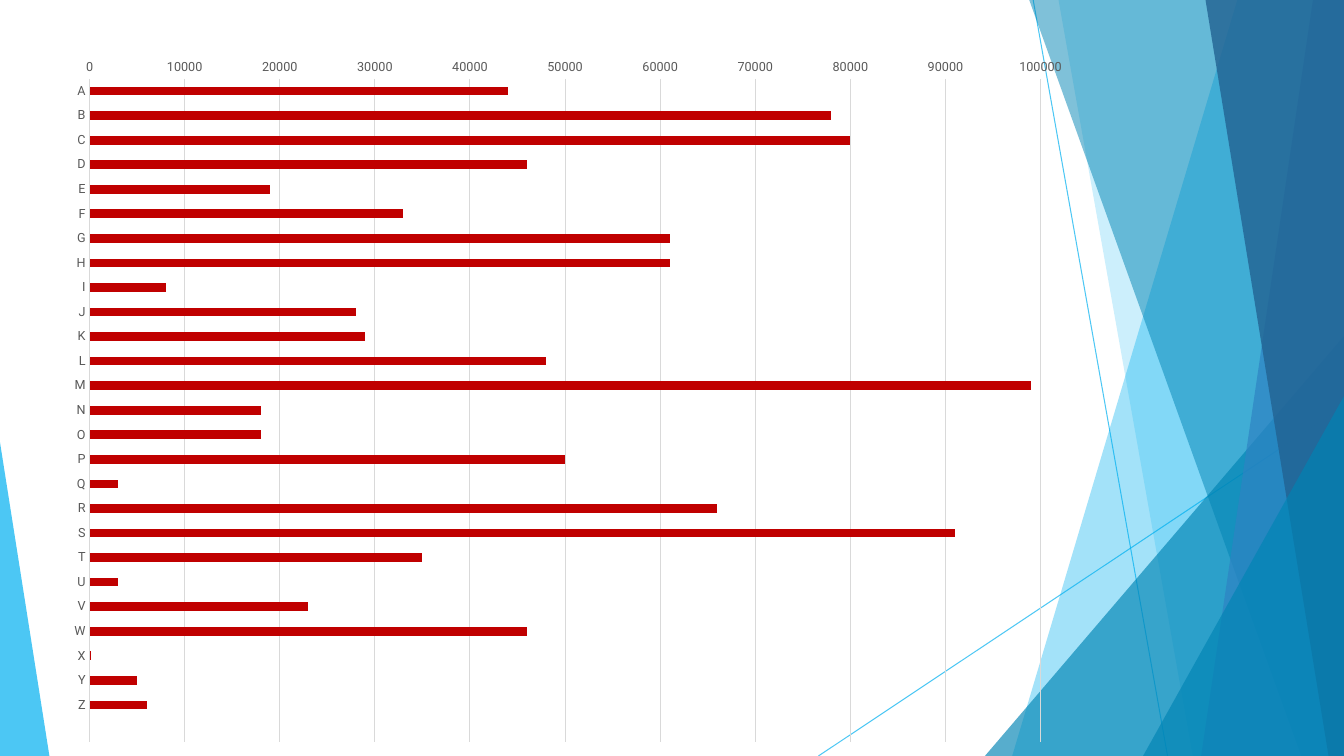
from dataclasses import dataclass

from lxml import etree
from pptx import Presentation
from pptx.chart import data as cd
from pptx.dml import color as col
from pptx.enum import chart as ch
from pptx.enum import shapes as sh
from pptx.oxml import ns
from pptx.util import Pt


@dataclass(frozen=True)
class Theme:
    sky: str = "00B0F0"
    teal: str = "0084B4"
    blue: str = "2E83C3"
    navy: str = "226292"
    bar: str = "C00000"
    grid: str = "D9D9D9"
    label: str = "595959"
    ink: str = "000000"
    font: str = "Roboto"
    base: float = 10
    small: float = 9
    hair: float = 0.75


THEME = Theme()
WIDE, HIGH, TOP = 960, 540, -0.6

# Values in thousands for A to Z; the last row stays empty
SALES = [44, 78, 80, 46, 19, 33, 61, 61, 8, 28, 29, 48, 99,
         18, 18, 50, 3, 66, 91, 35, 3, 23, 46, 0.2, 5, 6]


def rgb(code):
    return col.RGBColor.from_string(code)


def fade(shape, share):
    """Set the opacity, in percent, of a shape's colour."""
    for node in shape.element.spPr.iter(ns.qn("a:srgbClr")):
        etree.SubElement(node, ns.qn("a:alpha"), val=str(share * 1000))


def paint(shape, code, share):
    shape.shadow.inherit = False
    shape.fill.solid()
    shape.fill.fore_color.rgb = rgb(code)
    shape.line.fill.background()
    fade(shape, share)


def stroke(line, code):
    line.color.rgb = rgb(code)
    line.width = Pt(THEME.hair)


def ray(slide, x1, y1, x2, y2):
    line = slide.shapes.add_connector(
        sh.MSO_CONNECTOR.STRAIGHT, Pt(x1), Pt(y1), Pt(x2), Pt(y2))
    stroke(line.line, THEME.sky)
    fade(line, 70)
    etree.SubElement(line.element.spPr, ns.qn("a:effectLst"))


def band(slide, top, foot, code, share):
    """Fill from a slanted edge to the right side of the slide."""
    pen = slide.shapes.build_freeform(Pt(top), Pt(TOP))
    rest = [(WIDE, TOP), (WIDE, HIGH), (foot, HIGH)]
    pen.add_line_segments([(Pt(x), Pt(y)) for x, y in rest], close=True)
    paint(pen.convert_to_shape(), code, share)


def wedge(slide, left, top, width, apex, code, share):
    """Right triangle that stands on the bottom edge."""
    shape = slide.shapes.add_shape(
        sh.MSO_SHAPE.ISOSCELES_TRIANGLE,
        Pt(left), Pt(top), Pt(width), Pt(HIGH - top))
    shape.adjustments[0] = apex
    paint(shape, code, share)


def style(font, size, code):
    look = {"name": THEME.font, "size": Pt(size), "bold": False}
    for key, value in look.items():
        setattr(font, key, value)
    font.color.rgb = rgb(code)


def tune(axis, look):
    for key, value in look.items():
        setattr(axis, key, value)
    axis.major_tick_mark = axis.minor_tick_mark = ch.XL_TICK_MARK.NONE
    style(axis.tick_labels.font, THEME.small, THEME.label)


def place(chart, x, y, w, h):
    """Fix the inner plot area, as shares of the chart's size."""
    area = chart.element.find(".//" + ns.qn("c:plotArea"))
    old = area.find(ns.qn("c:layout"))
    if old is not None:
        area.remove(old)
    layout = etree.Element(ns.qn("c:layout"))
    area.insert(0, layout)
    box = etree.SubElement(layout, ns.qn("c:manualLayout"))
    parts = {"layoutTarget": "inner", "xMode": "edge", "yMode": "edge",
             "x": x, "y": y, "w": w, "h": h}
    for key, value in parts.items():
        etree.SubElement(box, ns.qn("c:" + key), val=str(value))


def bars(slide, left, top, width, height):
    data = cd.CategoryChartData(number_format="0")
    data.categories = [*"ABCDEFGHIJKLMNOPQRSTUVWXYZ", ""]
    data.add_series("Series 1", [round(v * 1000) for v in SALES] + [None])
    chart = slide.shapes.add_chart(
        ch.XL_CHART_TYPE.BAR_CLUSTERED,
        Pt(left), Pt(top), Pt(width), Pt(height), data).chart
    chart.has_title = chart.has_legend = False
    style(chart.font, THEME.base, THEME.ink)
    place(chart, 0.034, 0.046, 0.925, 0.934)

    # Bars
    plot = chart.plots[0]
    plot.gap_width = 182
    plot.vary_by_categories = False
    fill = plot.series[0].format.fill
    fill.solid()
    fill.fore_color.rgb = rgb(THEME.bar)

    # Axes
    names, scale = chart.category_axis, chart.value_axis
    tune(names, {"reverse_order": True, "has_major_gridlines": False})
    stroke(names.format.line, THEME.grid)
    tune(scale, {"minimum_scale": 0, "maximum_scale": 100000,
                 "major_unit": 10000, "has_major_gridlines": True})
    scale.format.line.fill.background()
    stroke(scale.major_gridlines.format.line, THEME.grid)
    scale.tick_labels.number_format = "0"
    scale.tick_labels.number_format_is_linked = False


def main():
    deck = Presentation()
    deck.slide_width, deck.slide_height = Pt(WIDE), Pt(HIGH)
    slide = deck.slides.add_slide(deck.slide_layouts[6])

    # Facets, from back to front
    ray(slide, 738, 0, 834, HIGH)
    ray(slide, WIDE, 290, 584.6, HIGH)
    band(slide, 884, 723, THEME.sky, 36)
    band(slide, 756, 852, THEME.sky, 20)
    wedge(slide, 703.5, 240, 256.5, 1, THEME.teal, 66)
    band(slide, 735, 929.5, THEME.teal, 50)
    band(slide, 938, 858, THEME.blue, 70)
    band(slide, 861, 949, THEME.navy, 80)
    wedge(slide, 816.5, 283, 143.5, 1, THEME.teal, 66)
    wedge(slide, 0, 316, 35.3, 0, THEME.sky, 70)

    # Chart
    bars(slide, 39, 33, 734.4, 507)
    deck.save("out.pptx")


if __name__ == "__main__":
    main()
